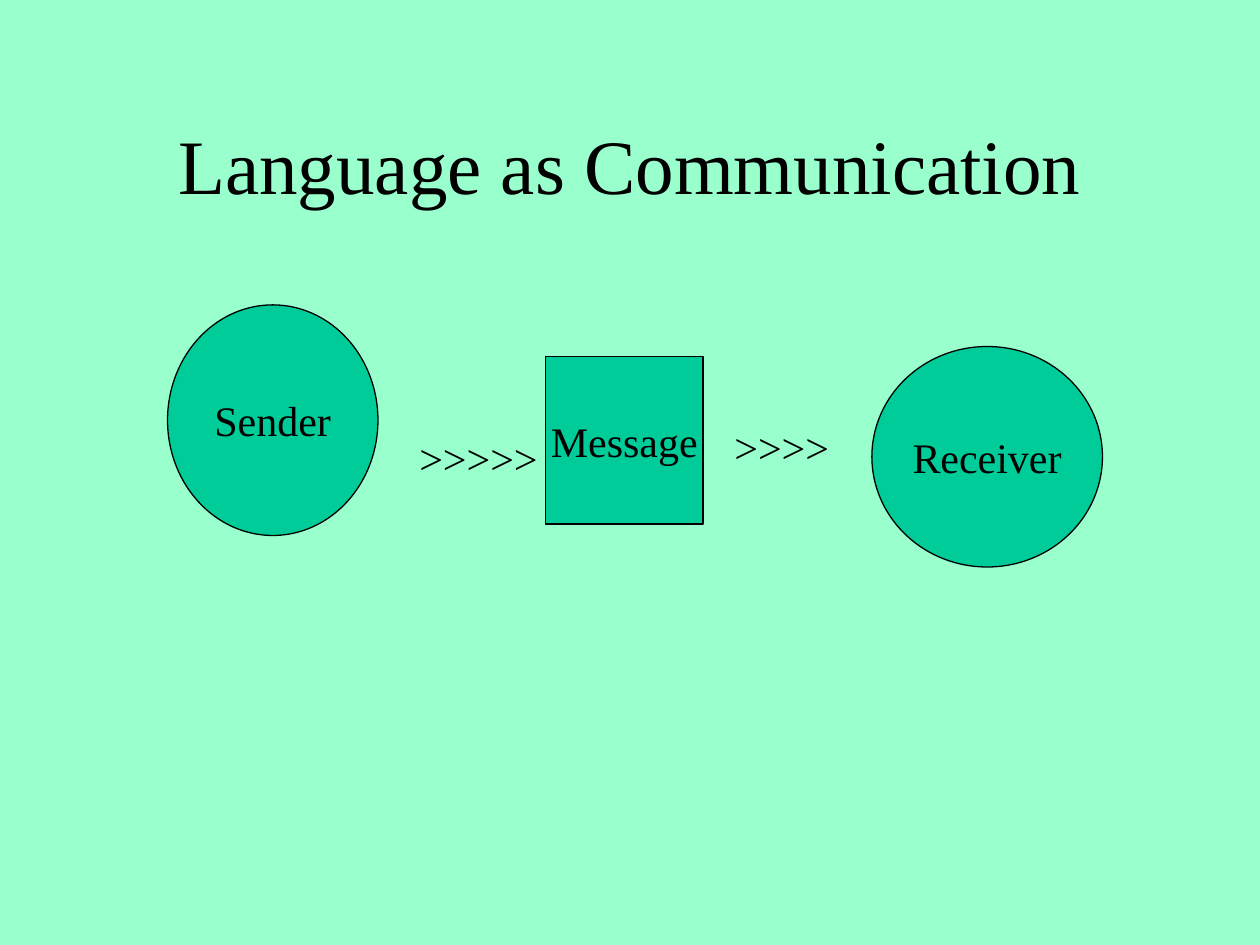
from pptx import Presentation
from pptx.dml.color import RGBColor
from pptx.enum.shapes import MSO_SHAPE
from pptx.enum.text import MSO_ANCHOR, PP_ALIGN
from pptx.util import Inches, Pt

OVAL, RECTANGLE = MSO_SHAPE.OVAL, MSO_SHAPE.RECTANGLE
TOP, MIDDLE = MSO_ANCHOR.TOP, MSO_ANCHOR.MIDDLE
LEFT, CENTER = PP_ALIGN.LEFT, PP_ALIGN.CENTER

FONT = "Times New Roman"
MINT, GREEN, BLACK = "99FFCC", "00CC99", "000000"


def set_fill(fill, color):
    fill.solid()
    fill.fore_color.rgb = RGBColor.from_string(color)


def write_text(shape, text, size=24, align=CENTER, anchor=MIDDLE, wrap=False):
    frame = shape.text_frame
    frame.word_wrap = wrap
    frame.vertical_anchor = anchor
    paragraph = frame.paragraphs[0]
    paragraph.alignment = align
    run = paragraph.add_run()
    run.text = text
    run.font.name = FONT
    run.font.size = Pt(size)
    set_fill(run.font.fill, BLACK)


presentation = Presentation()
presentation.slide_width = Inches(10)
presentation.slide_height = Inches(7.5)
slide = presentation.slides.add_slide(presentation.slide_layouts[6])
set_fill(slide.background.fill, MINT)

title = slide.shapes.add_textbox(Inches(0.75), Inches(0.67), Inches(8.5), Inches(1.25))
write_text(title, "Language as Communication", size=44, wrap=True)

# Stages of communication: label, outline, left, top, width, height
stages = [
    ("Sender", OVAL, 1.33, 2.42, 1.67, 1.83),
    ("Message", RECTANGLE, 4.33, 2.83, 1.25, 1.33),
    ("Receiver", OVAL, 6.92, 2.75, 1.83, 1.75),
]
for label, outline, *box in stages:
    stage = slide.shapes.add_shape(outline, *map(Inches, box))
    stage.shadow.inherit = False
    set_fill(stage.fill, GREEN)
    set_fill(stage.line.fill, BLACK)
    stage.line.width = Pt(0.75)
    write_text(stage, label)

# Signals between stages: text, left, top, width, height
signals = [
    (">>>>>", 3.23, 3.38, 1.14, 0.5),
    (">>>>", 5.73, 3.3, 0.95, 0.5),
]
for marks, *box in signals:
    signal = slide.shapes.add_textbox(*map(Inches, box))
    write_text(signal, marks, align=LEFT, anchor=TOP)

presentation.save("out.pptx")
